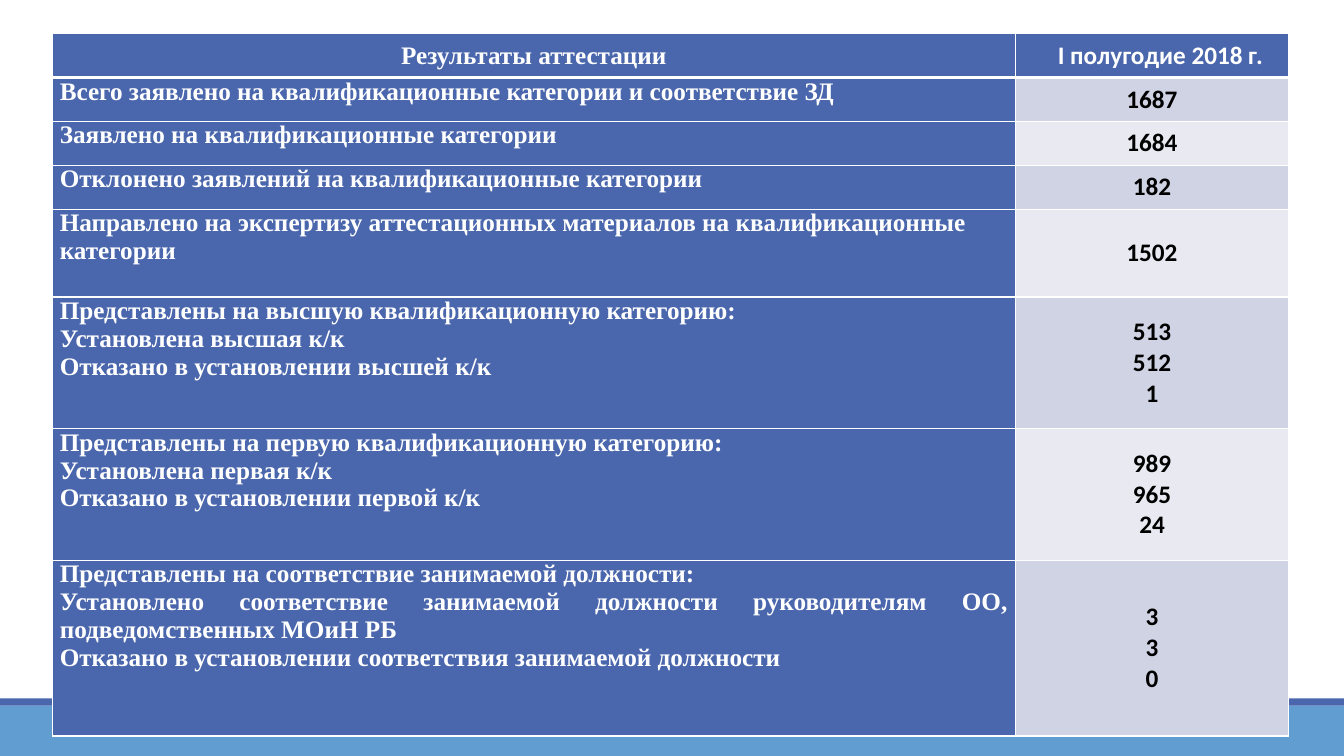
from lxml.etree import SubElement
from pptx import Presentation
from pptx.dml.color import RGBColor
from pptx.enum.shapes import MSO_SHAPE as Shape
from pptx.enum.text import MSO_ANCHOR as Anchor, PP_ALIGN as Align
from pptx.oxml.ns import qn
from pptx.util import Pt

WIDTH, HEIGHT = 960, 540
BLUE, SKY, WHITE, BLACK = "4A66AC", "629DD1", "FFFFFF", "000000"
BANDS = ("D0D3E3", "E9EAF1")
SERIF, SANS = "Times New Roman", "Calibri"
ROW_UNIT = 31.36


def color(hex_code):
    return RGBColor.from_string(hex_code)


class ResultsSlide:
    text_size = 18
    inset = 5.2

    def __init__(self, deck):
        self.slide = deck.slides.add_slide(deck.slide_layouts[6])

    def bar(self, top, height, fill):
        bar = self.slide.shapes.add_shape(
            Shape.RECTANGLE, 0, Pt(top), Pt(WIDTH), Pt(height))
        bar.shadow.inherit = False
        bar.fill.solid()
        bar.fill.fore_color.rgb = color(fill)
        bar.line.fill.background()

    def table(self, left, top, columns, rows):
        table = self.slide.shapes.add_table(
            len(rows), len(columns), Pt(left), Pt(top),
            Pt(sum(columns)), Pt(sum(rows))).table
        for column, width in zip(table.columns, columns):
            column.width = Pt(width)
        for row, height in zip(table.rows, rows):
            row.height = Pt(height)
        return table

    def borders(self, cell, top, bottom):
        properties = cell._tc.get_or_add_tcPr()
        for side, width in (("L", 1), ("R", 1), ("T", top), ("B", bottom)):
            line = SubElement(properties, qn(f"a:ln{side}"), w=str(Pt(width)))
            SubElement(SubElement(line, qn("a:solidFill")),
                       qn("a:srgbClr"), val=WHITE)

    def cell(self, cell, lines, font, ink, fill, align, anchor,
             top=1, bottom=1, indent=0):
        self.borders(cell, top, bottom)
        cell.fill.solid()
        cell.fill.fore_color.rgb = color(fill)
        cell.vertical_anchor = anchor
        cell.margin_left = Pt(self.inset + indent)
        cell.margin_right = Pt(self.inset)
        cell.margin_top = cell.margin_bottom = 0
        frame = cell.text_frame
        for number, line in enumerate(lines):
            paragraph = frame.add_paragraph() if number else frame.paragraphs[0]
            paragraph.alignment = align
            run = paragraph.add_run()
            run.text = line
            run.font.name = font
            run.font.size = Pt(self.text_size)
            run.font.bold = True
            run.font.color.rgb = color(ink)


# Each entry: height in row units, alignment, labels, values
RESULTS = [
    (1, Align.JUSTIFY,
     ["Всего заявлено на квалификационные категории и соответствие ЗД"],
     ["1687"]),
    (1, Align.JUSTIFY, ["Заявлено на квалификационные категории"], ["1684"]),
    (1, Align.JUSTIFY,
     ["Отклонено заявлений на квалификационные категории"], ["182"]),
    (2, Align.LEFT,
     ["Направлено на экспертизу аттестационных материалов на "
      "квалификационные категории"], ["1502"]),
    (3, Align.JUSTIFY,
     ["Представлены на высшую квалификационную категорию:",
      "Установлена высшая к/к",
      "Отказано в установлении высшей к/к"], ["513", "512", "1"]),
    (3, Align.LEFT,
     ["Представлены на первую квалификационную категорию:",
      "Установлена первая к/к",
      "Отказано в установлении первой к/к"], ["989", "965", "24"]),
    (4, Align.JUSTIFY,
     ["Представлены на соответствие занимаемой должности:",
      "Установлено соответствие занимаемой должности руководителям ОО, "
      "подведомственных МОиН РБ",
      "Отказано в установлении соответствия занимаемой должности"],
     ["3", "3", "0"]),
]


def main():
    deck = Presentation()
    deck.slide_width, deck.slide_height = Pt(WIDTH), Pt(HEIGHT)
    page = ResultsSlide(deck)

    # Footer bars
    page.bar(504, 36, SKY)
    page.bar(498.8, 5.2, BLUE)

    # Table header
    heights = [ROW_UNIT] + [units * ROW_UNIT for units, *_ in RESULTS]
    results = page.table(37.5, 24, [687.7, 195.4], heights)
    page.cell(results.cell(0, 0), ["Результаты аттестации"], SERIF,
              WHITE, BLUE, Align.CENTER, Anchor.MIDDLE, bottom=3)
    page.cell(results.cell(0, 1), ["I полугодие 2018 г."], SANS,
              WHITE, BLUE, Align.CENTER, Anchor.MIDDLE, bottom=3, indent=12)

    # Table body
    for row, (_, align, labels, values) in enumerate(RESULTS, start=1):
        top = 3 if row == 1 else 1
        page.cell(results.cell(row, 0), labels, SERIF,
                  WHITE, BLUE, align, Anchor.TOP, top=top)
        page.cell(results.cell(row, 1), values, SANS, BLACK,
                  BANDS[(row - 1) % 2], Align.CENTER, Anchor.MIDDLE, top=top)

    deck.save("out.pptx")


if __name__ == "__main__":
    main()
